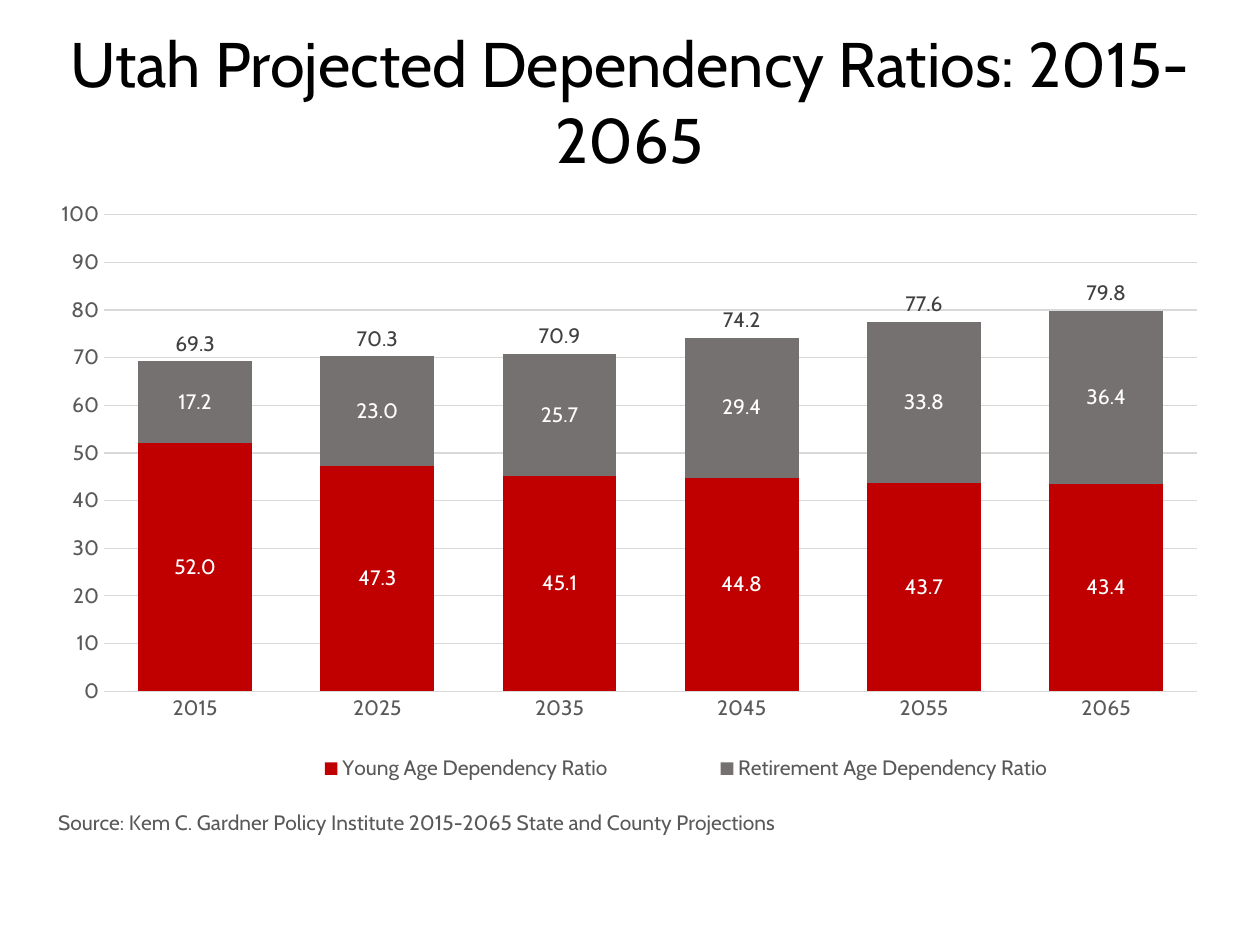
import pptx
import pptx.util
import pptx.dml.color
import pptx.chart.data
import pptx.enum.chart
import pptx.enum.text
import pptx.oxml

Inches = pptx.util.Inches
Enum = pptx.enum.chart
HUES = {"ink": "000000", "text": "595959", "total": "404040", "grid": "D9D9D9",
        "young": "C00000", "old": "767171", "white": "FFFFFF"}
YEARS = ["2015", "2025", "2035", "2045", "2055", "2065"]
SERIES = [
    ("Young Age Dependency Ratio", [52.0, 47.3, 45.1, 44.8, 43.7, 43.4],
     "young", "white", "CENTER"),
    ("Retirement Age Dependency Ratio", [17.2, 23.0, 25.7, 29.4, 33.8, 36.4],
     "old", "white", "CENTER"),
    ("Series 3", [69.3, 70.3, 70.9, 74.2, 77.6, 79.8],
     None, "total", "INSIDE_BASE"),
]
SOURCE = "Source: Kem C. Gardner Policy Institute 2015-2065 State and County Projections"


class Deck:
    """Holds the style and the current slide, and draws each kind of element."""

    def __init__(self, face):
        self.face = face
        self.show = pptx.Presentation()
        self.put(self.show, slide_width=Inches(10), slide_height=Inches(7.5))
        self.slide = self.show.slides.add_slide(self.show.slide_layouts[6])

    def put(self, item, **vals):
        for key, val in vals.items():
            setattr(item, key, val)

    def hue(self, name):
        return pptx.dml.color.RGBColor.from_string(HUES[name])

    def font(self, font, size, name):
        self.put(font, name=self.face, size=pptx.util.Pt(size), bold=False)
        font.color.rgb = self.hue(name)

    def line(self, form):
        form.line.color.rgb = self.hue("grid")
        form.line.width = pptx.util.Pt(0.75)

    def node(self, tag, body="", attrs=""):
        uri = pptx.oxml.ns.nsdecls("c")
        return pptx.oxml.parse_xml(f"<c:{tag} {uri} {attrs}>{body}</c:{tag}>")

    def place(self, host, spot, inner=False, **box):
        for old in host.findall(pptx.oxml.ns.qn("c:layout")):
            host.remove(old)
        body = '<c:layoutTarget val="inner"/>' if inner else ""
        body += "".join(f'<c:{key}Mode val="edge"/>' for key in "xy")
        body += "".join(f'<c:{key} val="{val}"/>' for key, val in box.items())
        host.insert(spot, self.node("layout", f"<c:manualLayout>{body}</c:manualLayout>"))

    def title(self, text, *box):
        frame = self.slide.shapes.add_textbox(*map(Inches, box)).text_frame
        self.put(frame, word_wrap=True, text=text,
                 vertical_anchor=pptx.enum.text.MSO_ANCHOR.MIDDLE)
        para = frame.paragraphs[0]
        para.alignment = pptx.enum.text.PP_ALIGN.CENTER
        self.font(para.runs[0].font, 36, "ink")

    def chart(self, *box):
        data = pptx.chart.data.CategoryChartData()
        data.categories = YEARS
        for name, vals, *_ in SERIES:
            data.add_series(name, vals)
        chart = self.slide.shapes.add_chart(
            Enum.XL_CHART_TYPE.COLUMN_STACKED, *map(Inches, box), data).chart
        chart.has_title = False
        self.font(chart.font, 12, "ink")
        plot = chart.plots[0]
        self.put(plot, gap_width=60, overlap=100, vary_by_categories=False)
        for item, (_, _, fill, ink, spot) in zip(plot.series, SERIES):
            self.bars(item, fill, ink, spot)
        self.axes(chart)
        self.legend(chart)
        area = chart.plots[0]._element.getparent()
        self.place(area, 0, inner=True, x=0.056, y=0.038, w=0.924, h=0.737)

    def bars(self, item, fill, ink, spot):
        if fill:
            item.format.fill.solid()
            item.format.fill.fore_color.rgb = self.hue(fill)
        else:
            item.format.fill.background()
        item.format.line.fill.background()
        tags = item.data_labels
        self.put(tags, show_value=True, number_format="#,##0.0",
                 number_format_is_linked=False,
                 position=Enum.XL_LABEL_POSITION[spot])
        self.font(tags.font, 12, ink)

    def axes(self, chart):
        none = Enum.XL_TICK_MARK.NONE
        base, side = chart.category_axis, chart.value_axis
        for axis in (base, side):
            self.put(axis, major_tick_mark=none, minor_tick_mark=none)
            self.font(axis.tick_labels.font, 12, "text")
        self.line(base.format)
        self.put(side, minimum_scale=0, maximum_scale=100, major_unit=10,
                 has_major_gridlines=True)
        self.put(side.tick_labels, number_format="0", number_format_is_linked=False)
        side.format.line.fill.background()
        self.line(side.major_gridlines.format)
        frame = base.axis_title.text_frame
        frame.text = SOURCE
        self.font(frame.paragraphs[0].runs[0].font, 12, "text")
        self.place(base.axis_title._element, 1, x=0.014, y=0.95)

    def legend(self, chart):
        chart.has_legend = True
        key = chart.legend
        self.put(key, position=Enum.XL_LEGEND_POSITION.BOTTOM, include_in_layout=False)
        self.font(key.font, 12, "text")
        key._element.insert(1, self.node(
            "legendEntry", '<c:idx val="2"/><c:delete val="1"/>'))
        self.place(key._element, 2, x=0.153, y=0.865, w=0.79, h=0.06)


def main():
    deck = Deck("Cabin")
    deck.title("Utah Projected Dependency Ratios: 2015-2065", 0.3, 0.14, 9.39, 1.31)
    deck.chart(0.3, 1.51, 9.39, 5.17)
    deck.show.save("out.pptx")


if __name__ == "__main__":
    main()
